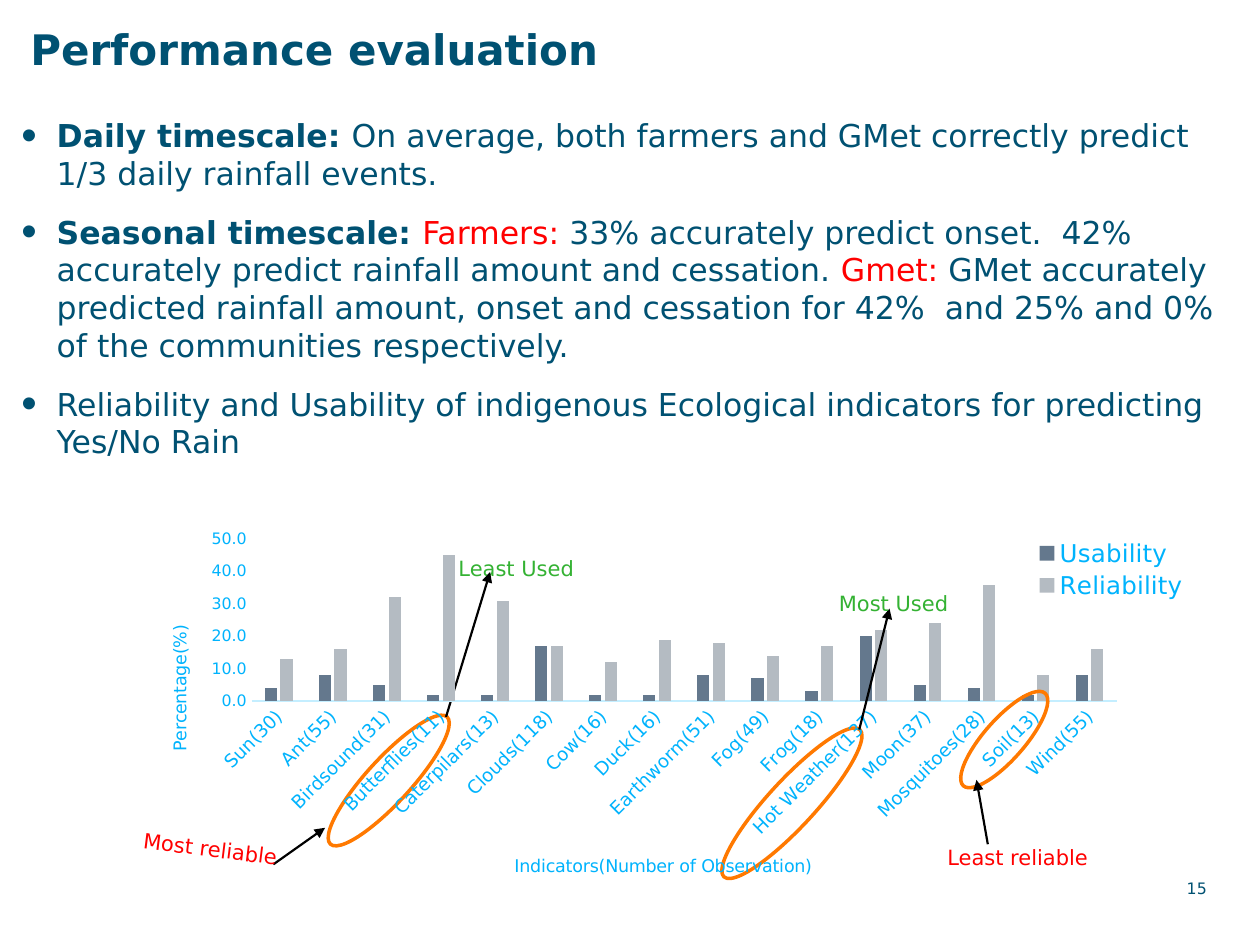
from typing import NamedTuple

from pptx import Presentation
from pptx import util as u
from pptx.chart.data import CategoryChartData
from pptx.dml.color import RGBColor
from pptx.enum import chart as ch
from pptx.enum import shapes, text
from pptx.oxml.ns import qn
from pptx.oxml.xmlchemy import OxmlElement

PX = 9144  # EMU in one px, 100 px to the inch
FONT = "DejaVu Sans"
NAVY, SKY, PALE = "005172", "00B3FD", "C4EEFF"
RED, GREEN, ORANGE, BLACK = "FF0000", "34B233", "FF7900", "000000"


class Box(NamedTuple):
    left: int
    top: int
    width: int
    height: int


class Ring(NamedTuple):
    box: Box
    rotation: float


class Arrow(NamedTuple):
    x1: int
    y1: int
    x2: int
    y2: int


class Label(NamedTuple):
    words: str
    box: Box
    color: str
    rotation: float = 0


class Piece(NamedTuple):
    words: str
    color: str = NAVY
    bold: bool = False


class Series(NamedTuple):
    name: str
    color: str
    values: tuple


BULLETS = [
    [Piece("Daily timescale: ", bold=True),
     Piece("On average, both farmers and GMet correctly predict 1/3 daily rainfall events.")],
    [Piece("Seasonal timescale: ", bold=True),
     Piece("Farmers: ", RED),
     Piece("33% accurately predict onset.  42% accurately predict rainfall amount and cessation. "),
     Piece("Gmet:", RED),
     Piece(" GMet accurately predicted rainfall amount, onset and cessation for 42%  and 25% "
           "and 0% of the communities respectively.")],
    [Piece("Reliability and Usability of indigenous Ecological indicators "
           "for predicting Yes/No Rain")],
]
INDICATORS = ["Sun(30)", "Ant(55)", "Birdsound(31)", "Butterflies(11)", "Caterpilars(13)",
              "Clouds(118)", "Cow(16)", "Duck(16)", "Earthworm(51)", "Fog(49)", "Frog(18)",
              "Hot Weather(137)", "Moon(37)", "Mosquitoes(28)", "Soil(13)", "Wind(55)"]
SERIES = [
    Series("Usability", "64788D", (4, 8, 5, 2, 2, 17, 2, 2, 8, 7, 3, 20, 5, 4, 2, 8)),
    Series("Reliability", "B4BBC2",
           (13, 16, 32, 45, 31, 17, 12, 19, 18, 14, 17, 22, 24, 36, 8, 16)),
]
BEHIND_CHART = [
    Ring(Box(291, 551, 35, 137), 42.5),
    Arrow(217, 686, 258, 657),
    Label("Most reliable", Box(104, 654, 133, 35), RED, 7.1),
    Label("Least Used", Box(354, 431, 119, 35), GREEN),
    Arrow(354, 569, 389, 454),
    Ring(Box(610, 558, 37, 159), 42.7),
]
OVER_CHART = [
    Ring(Box(781, 538, 32, 98), 41.4),
    Arrow(784, 670, 775, 619),
    Label("Least reliable", Box(742, 660, 139, 35), RED),
    Arrow(682, 579, 706, 483),
    Label("Most Used", Box(656, 459, 113, 35), GREEN),
]


def rgb(color: str) -> RGBColor:
    return RGBColor.from_string(color)


def emu(*lengths: int) -> list[int]:
    return [length * PX for length in lengths]


def style(font, size: float, color: str, bold: bool = False) -> None:
    font.name, font.size, font.bold = FONT, u.Pt(size), bold
    font.color.rgb = rgb(color)


def add_run(paragraph, piece: Piece, size: float) -> None:
    run = paragraph.add_run()
    run.text = piece.words
    style(run.font, size, piece.color, piece.bold)


def place(shape, box: Box) -> None:
    shape.left, shape.top, shape.width, shape.height = emu(*box)


def set_margins(frame, left: int, top: int, right: int, bottom: int) -> None:
    (frame.margin_left, frame.margin_top,
     frame.margin_right, frame.margin_bottom) = emu(left, top, right, bottom)


def add_child(parent, tag: str, **attributes: str):
    child = OxmlElement(tag)
    for key, value in attributes.items():
        child.set(key, value)
    parent.append(child)
    return child


def fill_title(title) -> None:
    place(title, Box(22, 3, 923, 70))
    frame = title.text_frame
    frame.vertical_anchor = text.MSO_ANCHOR.MIDDLE
    set_margins(frame, 2, 2, 10, 0)
    heading = frame.paragraphs[0]
    heading.alignment = text.PP_ALIGN.LEFT
    add_run(heading, Piece("Performance evaluation", bold=True), 24)


def fill_body(body) -> None:
    place(body, Box(7, 92, 985, 290))
    frame = body.text_frame
    frame.auto_size = text.MSO_AUTO_SIZE.NONE
    set_margins(frame, 10, 0, 10, 0)
    for index, pieces in enumerate(BULLETS):
        point = frame.add_paragraph() if index else frame.paragraphs[0]
        props = point._p.get_or_add_pPr()
        props.set("marL", str(28 * PX))
        props.set("indent", str(-28 * PX))
        add_child(add_child(props, "a:buClr"), "a:srgbClr", val=NAVY)
        add_child(props, "a:buSzPct", val="140000")
        add_child(props, "a:buChar", char="•")
        point.space_before = u.Pt(12 if index else 0)
        for piece in pieces:
            add_run(point, piece, 18)


def draw_ring(slide, ring: Ring) -> None:
    oval = slide.shapes.add_shape(shapes.MSO_SHAPE.OVAL, *emu(*ring.box))
    oval.rotation = ring.rotation
    oval.shadow.inherit = False
    oval.fill.background()
    oval.line.color.rgb = rgb(ORANGE)
    oval.line.width = u.Pt(2)


def draw_arrow(slide, arrow: Arrow) -> None:
    line = slide.shapes.add_connector(shapes.MSO_CONNECTOR.STRAIGHT, *emu(*arrow))
    line.line.color.rgb = rgb(BLACK)
    line.line.width = u.Pt(1.25)
    add_child(line.line._get_or_add_ln(), "a:tailEnd", type="triangle")
    add_child(line._element.spPr, "a:effectLst")


def draw_label(slide, label: Label) -> None:
    note = slide.shapes.add_textbox(*emu(*label.box))
    note.rotation = label.rotation
    note.text_frame.word_wrap = False
    words = note.text_frame.paragraphs[0]
    words.line_spacing = u.Pt(18)
    add_run(words, Piece(label.words, label.color), 12)


def draw_marks(slide, marks: list) -> None:
    painters = {Ring: draw_ring, Arrow: draw_arrow, Label: draw_label}
    for mark in marks:
        painters[type(mark)](slide, mark)


def set_layout(part, inner: bool = False, **fractions: float) -> None:
    """Fix a chart part at fractions (x, y, w, h) of the chart's size."""
    old = part.find(qn("c:layout"))
    if old is not None:
        part.remove(old)
    layout = OxmlElement("c:layout")
    manual = add_child(layout, "c:manualLayout")
    if inner:
        add_child(manual, "c:layoutTarget", val="inner")
    for mode in ("c:xMode", "c:yMode"):
        add_child(manual, mode, val="edge")
    for key, value in fractions.items():
        add_child(manual, f"c:{key}", val=str(value))
    overlay = part.find(qn("c:overlay"))
    if overlay is None:
        part.insert(0, layout)
    else:
        overlay.addprevious(layout)


def format_axis(axis, title: str, size: float, x: float, y: float) -> None:
    axis.has_major_gridlines = False
    axis.major_tick_mark = axis.minor_tick_mark = ch.XL_TICK_MARK.NONE
    style(axis.tick_labels.font, size, SKY)
    add_run(axis.axis_title.text_frame.paragraphs[0], Piece(title, SKY), 10)
    set_layout(axis.axis_title._element, x=x, y=y)


def draw_chart(slide) -> None:
    data = CategoryChartData(number_format="0.0")
    data.categories = INDICATORS
    for series in SERIES:
        data.add_series(series.name, series.values)
    chart = slide.shapes.add_chart(ch.XL_CHART_TYPE.COLUMN_CLUSTERED,
                                   *emu(114, 413, 858, 299), data).chart
    style(chart.font, 10, NAVY)
    chart.has_title = False
    set_layout(chart._chartSpace.chart.plotArea, inner=True, x=0.1, y=0.05, w=0.8, h=0.43)

    plot = chart.plots[0]
    plot.gap_width, plot.overlap, plot.vary_by_categories = 219, -27, False
    for bars, series in zip(plot.series, SERIES):
        bars.format.fill.solid()
        bars.format.fill.fore_color.rgb = rgb(series.color)

    indicators, percent = chart.category_axis, chart.value_axis
    format_axis(indicators, "Indicators(Number of Observation)", 10.5, 0.34, 0.88)
    indicators.format.line.color.rgb = rgb(PALE)
    indicators.format.line.width = u.Pt(0.75)
    indicators._element.txPr.find(qn("a:bodyPr")).set("rot", "-2700000")
    format_axis(percent, "Percentage(%)", 9, 0.02, 0.27)
    percent.minimum_scale, percent.maximum_scale, percent.major_unit = 0, 50, 10
    percent.tick_labels.number_format = "0.0"
    percent.tick_labels.number_format_is_linked = False
    percent.format.line.fill.background()

    chart.has_legend = True
    chart.legend.position = ch.XL_LEGEND_POSITION.RIGHT
    chart.legend.include_in_layout = False
    style(chart.legend.font, 14, SKY)
    set_layout(chart.legend._element, x=0.82, y=0.04, w=0.15, h=0.18)


def draw_page_number(slide) -> None:
    frame = slide.shapes.add_textbox(*emu(932, 697, 51, 18)).text_frame
    set_margins(frame, 10, 0, 4, 0)
    add_run(frame.paragraphs[0], Piece("15"), 9)


def main() -> None:
    deck = Presentation()
    deck.slide_width, deck.slide_height = emu(1000, 750)
    slide = deck.slides.add_slide(deck.slide_layouts[1])
    fill_title(slide.shapes.title)
    fill_body(slide.placeholders[1])
    draw_page_number(slide)
    draw_marks(slide, BEHIND_CHART)
    draw_chart(slide)
    draw_marks(slide, OVER_CHART)
    deck.save("out.pptx")


if __name__ == "__main__":
    main()
